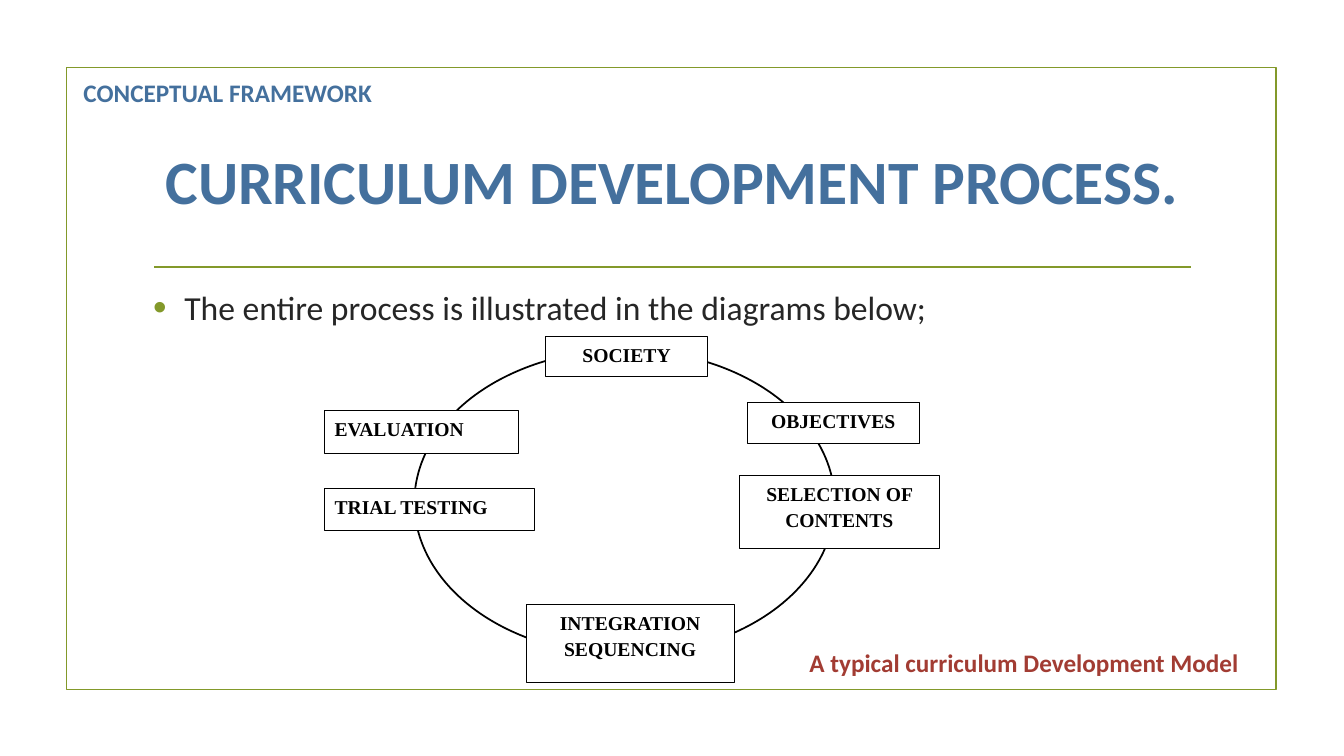
import pptx
import pptx.util
import pptx.dml.color
import pptx.enum.shapes
import pptx.enum.text
import pptx.oxml
import pptx.oxml.ns

Inches = pptx.util.Inches
Pt = pptx.util.Pt
ALIGN = pptx.enum.text.PP_ALIGN
ANCHOR = pptx.enum.text.MSO_ANCHOR
SHAPE = pptx.enum.shapes.MSO_SHAPE

COLORS = {
    "green": "83992A",
    "blue": "44709D",
    "red": "A23C33",
    "body": "262626",
    "black": "000000",
    "white": "FFFFFF",
}

STAGES = [
    ("SOCIETY", (2.19, 0, 1.61, 0.39), ALIGN.CENTER),
    ("OBJECTIVES", (4.19, 0.65, 1.71, 0.41), ALIGN.CENTER),
    ("SELECTION OF CONTENTS", (4.11, 1.38, 1.99, 0.72), ALIGN.CENTER),
    ("INTEGRATION SEQUENCING", (2, 2.66, 2.06, 0.77), ALIGN.CENTER),
    ("EVALUATION", (0, 0.73, 1.92, 0.43), ALIGN.LEFT),
    ("TRIAL TESTING", (0, 1.5, 2.08, 0.42), ALIGN.LEFT),
]


def color(name):
    return pptx.dml.color.RGBColor.from_string(COLORS[name])


def element(tag, **attributes):
    node = pptx.oxml.parse_xml(f"<{tag} {pptx.oxml.ns.nsdecls('a')}/>")
    for key, value in attributes.items():
        node.set(key, value)
    return node


def write(shape, text, size, color_name, font="Calibri", bold=True,
          align=ALIGN.LEFT, anchor=ANCHOR.TOP):
    frame = shape.text_frame
    frame.word_wrap = True
    frame.vertical_anchor = anchor
    paragraph = frame.paragraphs[0]
    paragraph.alignment = align
    run = paragraph.add_run()
    run.text = text
    run.font.name = font
    run.font.size = Pt(size)
    run.font.bold = bold
    run.font.color.rgb = color(color_name)
    return paragraph


def add_text(slide, box, text, size, color_name, **options):
    shape = slide.shapes.add_textbox(*map(Inches, box))
    return write(shape, text, size, color_name, **options)


def add_outlined(shapes, kind, box, line, width, fill=None):
    shape = shapes.add_shape(kind, *map(Inches, box))
    shape.shadow.inherit = False
    if fill:
        shape.fill.solid()
        shape.fill.fore_color.rgb = color(fill)
    else:
        shape.fill.background()
    shape.line.color.rgb = color(line)
    shape.line.width = Pt(width)
    return shape


def add_frame(slide, box):
    left, top, width, height = box
    add_outlined(slide.shapes, SHAPE.RECTANGLE, box, "green", 1.25)
    rule_top = Inches(top + 1.98)
    rule = slide.shapes.add_connector(
        pptx.enum.shapes.MSO_CONNECTOR.STRAIGHT,
        Inches(left + 0.87), rule_top, Inches(left + width - 0.85), rule_top)
    rule.line.color.rgb = color("green")
    rule.line.width = Pt(1.25)
    rule.element.spPr.append(element("a:effectLst"))
    add_text(slide, (left + 0.07, top + 0.05, 3.2, 0.4),
             "CONCEPTUAL FRAMEWORK", 18, "blue")
    add_text(slide, (left + width - 4.73, top + height - 0.47, 4.7, 0.4),
             "A typical curriculum Development Model", 18, "red")


def add_content(slide, box):
    left, top, width, height = box
    add_text(slide, (left, top, width, 1.43), "CURRICULUM DEVELOPMENT PROCESS.",
             44, "blue", align=ALIGN.CENTER, anchor=ANCHOR.MIDDLE)
    paragraph = add_text(slide, (left, top + 1.73, width, height - 1.73),
                         "The entire process is illustrated in the diagrams below;",
                         24, "body", bold=False)
    properties = paragraph._p.get_or_add_pPr()
    indent = Inches(0.31)
    properties.set("marL", str(indent))
    properties.set("indent", str(-indent))
    bullet_color = element("a:buClr")
    bullet_color.append(element("a:srgbClr", val=COLORS["green"]))
    properties.append(bullet_color)
    properties.append(element("a:buSzPct", val="115000"))
    properties.append(element("a:buFont", typeface="Arial"))
    properties.append(element("a:buChar", char="•"))
    paragraph.space_after = Pt(6)


def add_cycle(slide, box):
    left, top, width, height = box
    group = slide.shapes.add_group_shape()
    add_outlined(group.shapes, SHAPE.OVAL,
                 (left + 0.89, top + 0.13, width - 1.93, height - 0.4),
                 "black", 1.25)
    for name, (x, y, stage_width, stage_height), align in STAGES:
        stage = add_outlined(group.shapes, SHAPE.RECTANGLE,
                             (left + x, top + y, stage_width, stage_height),
                             "black", 0.5, "white")
        paragraph = write(stage, name, 14, "black",
                          font="Times New Roman", align=align)
        paragraph.line_spacing = 1.07
        paragraph.space_after = Pt(4)


def main():
    presentation = pptx.Presentation()
    presentation.slide_width = Inches(13.33)
    presentation.slide_height = Inches(7.5)
    slide = presentation.slides.add_slide(presentation.slide_layouts[6])
    add_frame(slide, (0.66, 0.67, 12, 6.17))
    add_content(slide, (1.42, 1.07, 10.5, 5.36))
    add_cycle(slide, (3.22, 3.34, 6.1, 3.43))
    presentation.save("out.pptx")


if __name__ == "__main__":
    main()
